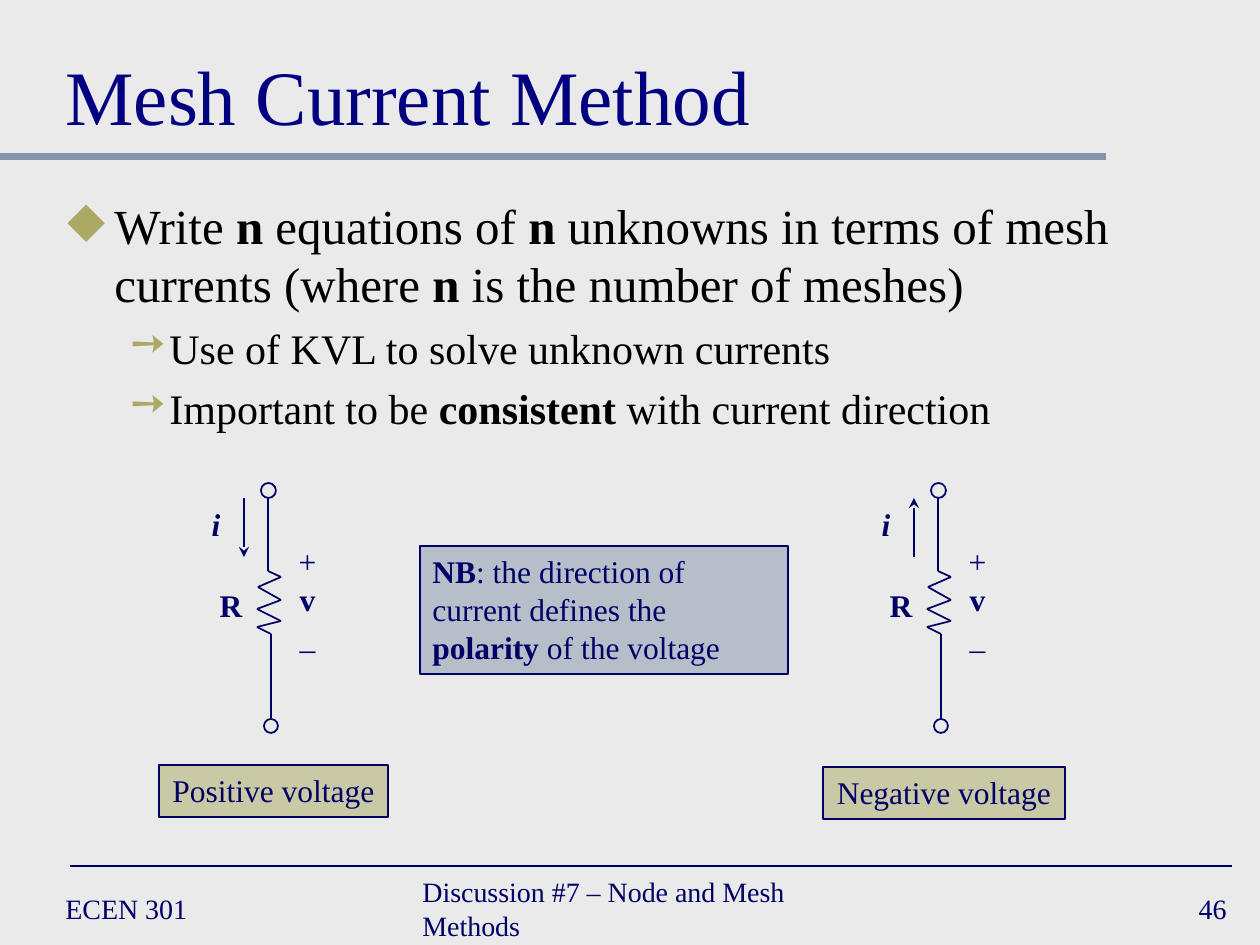
from itertools import pairwise
from lxml.etree import SubElement
from pptx import Presentation
from pptx.dml.color import RGBColor
from pptx.enum.shapes import MSO_CONNECTOR, MSO_SHAPE
from pptx.enum.text import MSO_ANCHOR, PP_ALIGN
from pptx.oxml.ns import qn
from pptx.util import Pt

FONT = "Times New Roman"
NAVY, TITLE, BLACK = "000066", "000080", "000000"
STEEL, OLIVE, PAPER = "8495A9", "ACA964", "EAEAEA"

# Content: ** switches bold on and off
HEADING = "Mesh Current Method"
BULLETS = [
    (0, "Write **n** equations of **n** unknowns in terms of mesh currents "
        "(where **n** is the number of meshes)"),
    (1, "Use of KVL to solve unknown currents"),
    (1, "Important to be **consistent** with current direction"),
]
LEVELS = [  # mark, size, text indent, hanging indent (px)
    ("◆", 28, 47, 47),
    ("➙", 24, 102, 39),
]
NOTE = "**NB**: the direction of current defines the **polarity** of the voltage"
FOOTERS = [
    ("ECEN 301", (53, 882, 273, 53), PP_ALIGN.LEFT),
    ("Discussion #7 – Node and Mesh Methods", (410, 882, 483, 53), PP_ALIGN.LEFT),
    ("46", (977, 882, 262, 53), PP_ALIGN.RIGHT),
]
CAPTIONS = [
    ("Positive voltage", (159, 765, 229, 52)),
    ("Negative voltage", (823, 767, 242, 52)),
]

# Resistor circuit, in px for the left one; the right one is shifted
CIRCUIT_SHIFT = 670
WIRE = [(268, 498), (268, 571), (281, 577), (258, 587), (281, 600),
        (257, 609), (281, 621), (257, 627), (271, 634), (271, 718)]
TERMINALS = [(261, 483, 15, 15), (264, 719, 14, 14)]
ARROW_X, ARROW_TOP, ARROW_BOTTOM = 244, 498, 557
LABELS = [  # lines, box, italic
    (["+", "**v**", "_"], (286, 536, 43, 126), False),
    (["**R**"], (207, 580, 48, 50), False),
    (["**i**"], (199, 499, 34, 50), True),
]


def px(length):
    return round(length * 914400 / 126)


def colour(value):
    return RGBColor.from_string(value)


def write(frame, lines, size=18, color=NAVY, italic=False, align=PP_ALIGN.LEFT,
          anchor=MSO_ANCHOR.TOP, wrap=True):
    frame.word_wrap = wrap
    frame.vertical_anchor = anchor
    for index, line in enumerate(lines):
        para = frame.paragraphs[0] if index == 0 else frame.add_paragraph()
        para.alignment = align
        for part, text in enumerate(line.split("**")):
            if text:
                span = para.add_run()
                span.text = text
                span.font.name = FONT
                span.font.size = Pt(size)
                span.font.bold = part % 2 == 1
                span.font.italic = italic
                span.font.color.rgb = colour(color)


def add_text(box, lines, **style):
    frame = page.shapes.add_textbox(*map(px, box)).text_frame
    write(frame, lines, **style)
    return frame


def add_shape(kind, box, fill=None):
    shape = page.shapes.add_shape(kind, *map(px, box))
    shape.shadow.inherit = False
    shape.line.color.rgb = colour(NAVY)
    shape.line.width = Pt(1)
    if fill:
        shape.fill.solid()
        shape.fill.fore_color.rgb = colour(fill)
        tint = shape.fill._xPr.find(".//" + qn("a:srgbClr"))
        SubElement(tint, qn("a:alpha"), val="50000")
    else:
        shape.fill.background()
    return shape


def add_line(start, end, color=NAVY, width=1, arrow=False):
    line = page.shapes.add_connector(MSO_CONNECTOR.STRAIGHT, *map(px, start + end))
    line.line.color.rgb = colour(color)
    line.line.width = Pt(width)
    if arrow:
        SubElement(line.line._get_or_add_ln(), qn("a:tailEnd"), type="stealth")
    SubElement(line._element.spPr, qn("a:effectLst"))


def add_bullet(para, level):
    mark, size, indent, hanging = LEVELS[level]
    para.level = level
    properties = para._p.get_or_add_pPr()
    properties.set("marL", str(px(indent)))
    properties.set("indent", str(-px(hanging)))
    tint = SubElement(properties, qn("a:buClr"))
    SubElement(tint, qn("a:srgbClr"), val=OLIVE)
    SubElement(properties, qn("a:buChar"), char=mark)
    for span in para.runs:
        span.font.size = Pt(size)


def add_circuit(shift, downward):
    for left, top, width, height in TERMINALS:
        add_shape(MSO_SHAPE.OVAL, (left + shift, top, width, height))
    for start, end in pairwise((x + shift, y) for x, y in WIRE):
        add_line(start, end)
    ends = [(ARROW_X + shift, ARROW_TOP), (ARROW_X + shift, ARROW_BOTTOM)]
    add_line(*(ends if downward else ends[::-1]), arrow=True)
    for lines, (left, top, width, height), italic in LABELS:
        add_text((left + shift, top, width, height), lines, italic=italic,
                 align=PP_ALIGN.CENTER, wrap=False)


deck = Presentation()
deck.slide_width, deck.slide_height = px(1260), px(945)
page = deck.slides.add_slide(deck.slide_layouts[6])
page.background.fill.solid()
page.background.fill.fore_color.rgb = colour(PAPER)

# Rules and footer
add_line((0, 157), (1106, 157), color=STEEL, width=4)
add_line((70, 866), (1232, 866))
for text, box, align in FOOTERS:
    add_text(box, [text], size=16, align=align, anchor=MSO_ANCHOR.MIDDLE, wrap=False)

# Title and bullets
add_text((53, 21, 1155, 126), [HEADING], size=44, color=TITLE, anchor=MSO_ANCHOR.BOTTOM)
body = add_text((55, 189, 1152, 262), [text for _, text in BULLETS], color=BLACK)
for index, (para, (level, _)) in enumerate(zip(body.paragraphs, BULLETS)):
    add_bullet(para, level)
    if index:
        para.space_before = Pt(5.5)

# Circuits, note and captions
add_circuit(0, downward=True)
add_circuit(CIRCUIT_SHIFT, downward=False)
note = add_shape(MSO_SHAPE.RECTANGLE, (420, 546, 368, 128), fill=STEEL)
write(note.text_frame, [NOTE])
for text, box in CAPTIONS:
    caption = add_shape(MSO_SHAPE.RECTANGLE, box, fill=OLIVE)
    write(caption.text_frame, [text], align=PP_ALIGN.CENTER, wrap=False)

deck.save("out.pptx")
